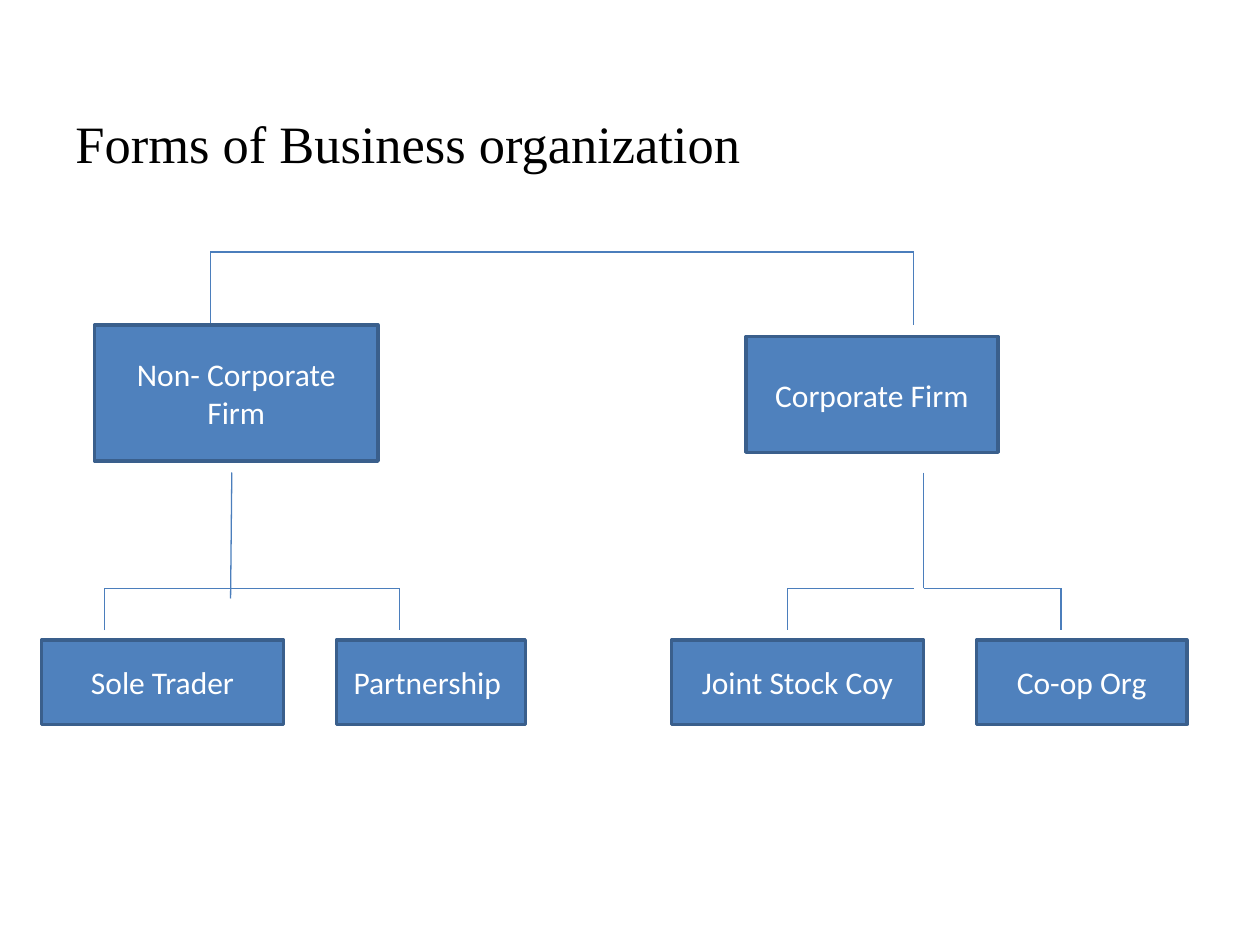
from lxml.etree import SubElement
from pptx import Presentation
from pptx.dml.color import RGBColor
from pptx.enum.shapes import MSO_CONNECTOR as Connector, MSO_SHAPE as Shape
from pptx.enum.text import MSO_ANCHOR as Anchor, PP_ALIGN as Align
from pptx.oxml.ns import qn
from pptx.util import Inches, Pt


def colour(code):
    return RGBColor.from_string(code)


class ChartSlide:
    """Style and slide of the organization chart."""
    title_font, box_font = "Times New Roman", "Calibri"
    black, white = "000000", "FFFFFF"
    box_fill, box_edge, branch = "4F81BD", "3A5F8C", "4B7EBC"

    def __init__(self, slide):
        self.shapes = slide.shapes

    def set_text(self, frame, text, font, size, code):
        frame.word_wrap = True
        frame.text = text
        para = frame.paragraphs[0]
        span = para.runs[0]
        span.font.name = font
        span.font.size = Pt(size)
        span.font.color.rgb = colour(code)
        return para

    def title(self, text, *place):
        box = self.shapes.add_textbox(*map(Inches, place))
        para = self.set_text(box.text_frame, text, self.title_font, 30, self.black)
        para.space_before = Pt(6)

    def box(self, text, *place):
        box = self.shapes.add_shape(Shape.RECTANGLE, *map(Inches, place))
        box.shadow.inherit = False
        box.fill.solid()
        box.fill.fore_color.rgb = colour(self.box_fill)
        box.line.color.rgb = colour(self.box_edge)
        box.line.width = Pt(2)
        box.text_frame.vertical_anchor = Anchor.MIDDLE
        para = self.set_text(box.text_frame, text, self.box_font, 18, self.white)
        para.alignment = Align.CENTER

    def line(self, *ends):
        line = self.shapes.add_connector(Connector.STRAIGHT, *map(Inches, ends))
        line.line.color.rgb = colour(self.branch)
        line.line.width = Pt(0.75)
        SubElement(line._element.spPr, qn("a:effectLst"))

    def bracket(self, *points):
        """Join successive points with straight lines."""
        for start, end in zip(points, points[1:]):
            self.line(*start, *end)


def main():
    deck = Presentation()
    deck.slide_width, deck.slide_height = Inches(10), Inches(7.5)
    page = ChartSlide(deck.slides.add_slide(deck.slide_layouts[6]))

    page.title("Forms of Business organization", 0.5, 0.83, 9, 5.87)

    top, firm_top = 2, 2.58
    page.bracket((1.67, firm_top), (1.67, top), (7.25, top), (7.25, firm_top))
    page.box("Non- Corporate Firm", 0.75, firm_top, 2.25, 1.08)
    page.box("Corporate Firm", 5.92, 2.67, 2, 0.92)

    stem_top, fork, fork_end = 3.75, 4.67, 5
    page.line(1.84, stem_top, 1.83, 4.75)
    page.bracket((0.83, fork_end), (0.83, fork), (3.17, fork), (3.17, fork_end))
    page.bracket((7.33, stem_top), (7.33, fork), (8.42, fork), (8.42, fork_end))
    page.bracket((7.25, fork), (6.25, fork), (6.25, fork_end))

    for text, left, width in (
        ("Sole Trader", 0.33, 1.92),
        ("Partnership ", 2.67, 1.5),
        ("Joint Stock Coy", 5.33, 2),
        ("Co-op Org", 7.75, 1.67),
    ):
        page.box(text, left, 5.08, width, 0.67)

    deck.save("out.pptx")


if __name__ == "__main__":
    main()
